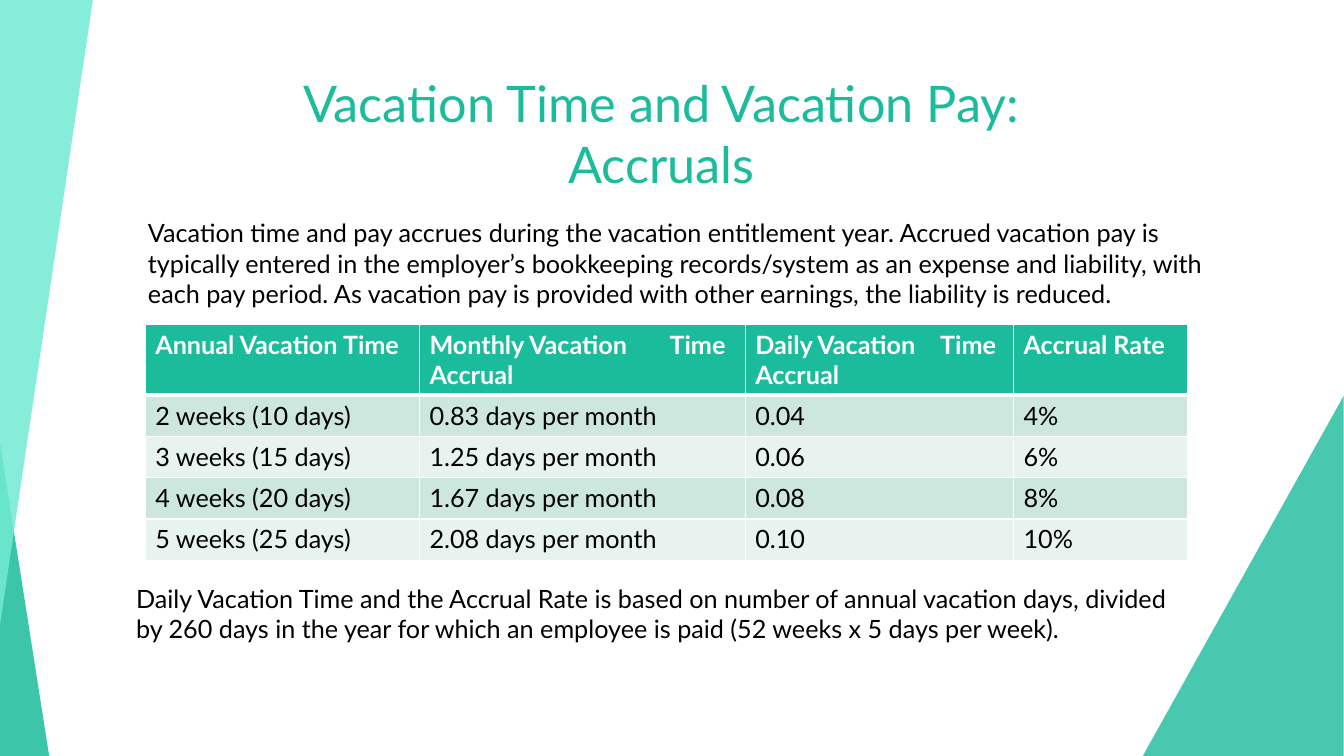
"""Build the slide on vacation time and vacation pay accruals."""
from dataclasses import dataclass

from lxml.etree import SubElement
from pptx import Presentation
from pptx.dml.color import RGBColor
from pptx.enum.shapes import MSO_SHAPE
from pptx.enum.text import MSO_ANCHOR, PP_ALIGN
from pptx.oxml.ns import qn
from pptx.util import Cm, Pt


@dataclass(frozen=True)
class Theme:
    font: str = "Lato"
    title_size: int = 36
    body_size: int = 18
    accent: str = "1BBC9B"
    light: str = "71EBD2"
    text: str = "000000"
    white: str = "FFFFFF"
    bands: tuple = ("CDE7DE", "E8F3EF")


THEME = Theme()

TITLE = "Vacation Time and Vacation Pay: Accruals"
INTRO = ("Vacation time and pay accrues during the vacation entitlement year. "
         "Accrued vacation pay is typically entered in the employer’s bookkeeping "
         "records/system as an expense and liability, with each pay period. "
         "As vacation pay is provided with other earnings, the liability is reduced.")
FOOTNOTE = ("Daily Vacation Time and the Accrual Rate is based on number of annual "
            "vacation days, divided by 260 days in the year for which an employee "
            "is paid (52 weeks x 5 days per week).")
HEADER = ["Annual Vacation Time", "Monthly Vacation\tTime Accrual",
          "Daily Vacation\tTime Accrual", "Accrual Rate"]
ACCRUALS = [
    ("2 weeks (10 days)", "0.83 days per month", "0.04", "4%"),
    ("3 weeks (15 days)", "1.25 days per month", "0.06", "6%"),
    ("4 weeks (20 days)", "1.67 days per month", "0.08", "8%"),
    ("5 weeks (25 days)", "2.08 days per month", "0.10", "10%"),
]
COL_WIDTHS = [6.91, 8.21, 6.76, 4.38]
HEADER_TABS = {1: 6.05, 2: 4.66}
HEADER_HEIGHT, ROW_HEIGHT = 1.75, 1.04
TABLE_LEFT, TABLE_TOP = 3.66, 8.18

TRIANGLES = [
    (0, 11.15, 1.24, 7.9, 0, 0, THEME.accent, 85),
    (0, 0, 2.34, 15.75, 1, 180, THEME.light, 85),
    (28.8, 9.98, 5.06, 9.07, 1, 0, THEME.accent, 80),
]
TEXTS = [
    (TITLE, (5.11, 1.7, 23.11, 3.66), THEME.title_size, THEME.accent, PP_ALIGN.CENTER),
    (INTRO, (3.48, 5.36, 28.27, 2.57), THEME.body_size, THEME.text, PP_ALIGN.LEFT),
    (FOOTNOTE, (3.18, 14.58, 27.23, 1.8), THEME.body_size, THEME.text, PP_ALIGN.LEFT),
]


def add_run(p, text, size, color, bold=False):
    r = p.add_run()
    r.text = text
    r.font.name = THEME.font
    r.font.size = Pt(size)
    r.font.bold = bold
    r.font.color.rgb = RGBColor.from_string(color)


def add_triangle(s, left, top, width, height, apex, rotation, color, alpha):
    sp = s.shapes.add_shape(MSO_SHAPE.ISOSCELES_TRIANGLE,
                            Cm(left), Cm(top), Cm(width), Cm(height))
    sp.adjustments[0] = apex
    sp.rotation = rotation
    sp.shadow.inherit = False
    sp.line.fill.background()
    sp.fill.solid()
    sp.fill.fore_color.rgb = RGBColor.from_string(color)
    clr = sp.fill._xPr.find(qn("a:solidFill"))[0]
    SubElement(clr, qn("a:alpha"), val=str(alpha * 1000))


def add_text(s, text, box, size, color, align):
    tf = s.shapes.add_textbox(*map(Cm, box)).text_frame
    tf.word_wrap = True
    tf.vertical_anchor = MSO_ANCHOR.TOP
    p = tf.paragraphs[0]
    p.alignment = align
    add_run(p, text, size, color)


def set_borders(cell, top, bottom):
    tcPr = cell._tc.get_or_add_tcPr()
    for side, width in (("L", 1), ("R", 1), ("T", top), ("B", bottom)):
        ln = SubElement(tcPr, qn(f"a:ln{side}"), w=str(Pt(width)))
        fill = SubElement(ln, qn("a:solidFill"))
        SubElement(fill, qn("a:srgbClr"), val=THEME.white)


def add_tab(p, position):
    tabs = SubElement(p._p.get_or_add_pPr(), qn("a:tabLst"))
    SubElement(tabs, qn("a:tab"), pos=str(Cm(position)), algn="l")


def add_accrual_table(s):
    rows = [HEADER, *ACCRUALS]
    heights = [HEADER_HEIGHT] + [ROW_HEIGHT] * len(ACCRUALS)
    table = s.shapes.add_table(len(rows), len(HEADER), Cm(TABLE_LEFT), Cm(TABLE_TOP),
                               Cm(sum(COL_WIDTHS)), Cm(sum(heights))).table
    for col, width in zip(table.columns, COL_WIDTHS):
        col.width = Cm(width)
    for i, (values, height) in enumerate(zip(rows, heights)):
        table.rows[i].height = Cm(height)
        head = i == 0
        fill = THEME.accent if head else THEME.bands[(i - 1) % 2]
        for j, value in enumerate(values):
            cell = table.cell(i, j)
            set_borders(cell, top=3 if i == 1 else 1, bottom=3 if head else 1)
            cell.fill.solid()
            cell.fill.fore_color.rgb = RGBColor.from_string(fill)
            p = cell.text_frame.paragraphs[0]
            if head and j in HEADER_TABS:
                add_tab(p, HEADER_TABS[j])
            add_run(p, value, THEME.body_size, THEME.white if head else THEME.text, head)


def main():
    prs = Presentation()
    prs.slide_width, prs.slide_height = Cm(33.87), Cm(19.05)
    s = prs.slides.add_slide(prs.slide_layouts[6])
    for triangle in TRIANGLES:
        add_triangle(s, *triangle)
    for text in TEXTS:
        add_text(s, *text)
    add_accrual_table(s)
    prs.save("out.pptx")


if __name__ == "__main__":
    main()
